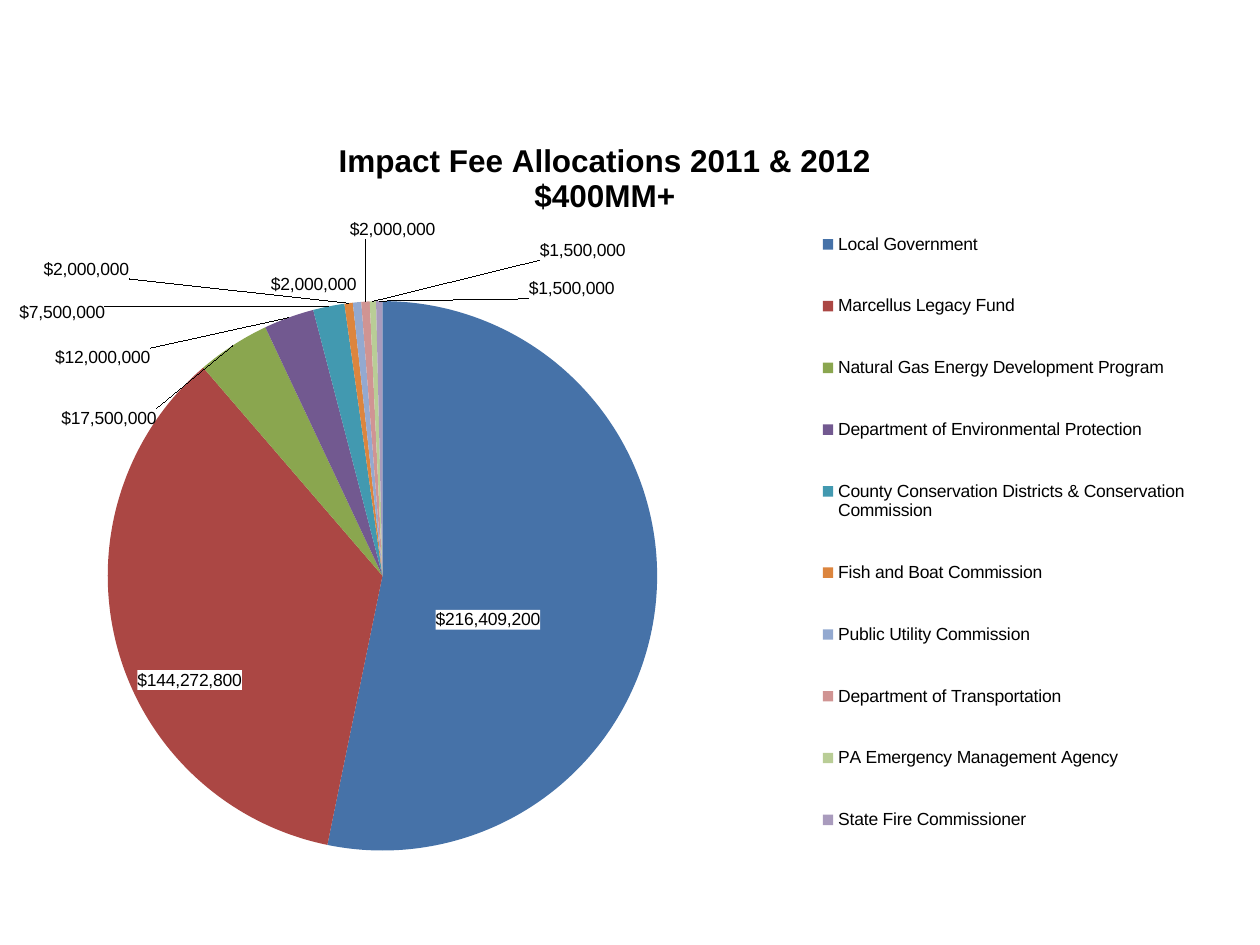
"""Build the impact fee allocation slide with its pie chart."""
from lxml.etree import SubElement
from pptx import Presentation
from pptx.chart.data import CategoryChartData as Data
from pptx.dml.color import RGBColor as RGB
from pptx.enum.chart import XL_CHART_TYPE as Kind
from pptx.enum.chart import XL_LABEL_POSITION as Spot
from pptx.enum.chart import XL_LEGEND_POSITION as Side
from pptx.oxml import parse_xml
from pptx.oxml.ns import nsdecls, qn
from pptx.util import Pt

BLACK = RGB(0, 0, 0)
BLUE = RGB(0x46, 0x72, 0xA8)
RED = RGB(0xAB, 0x47, 0x44)
GREEN = RGB(0x8A, 0xA6, 0x4F)
PURPLE = RGB(0x72, 0x59, 0x90)
TEAL = RGB(0x42, 0x99, 0xB0)
ORANGE = RGB(0xDC, 0x85, 0x3E)
SKY = RGB(0x93, 0xA9, 0xD0)
PINK = RGB(0xD0, 0x94, 0x93)
LIME = RGB(0xB9, 0xCD, 0x96)
LILAC = RGB(0xA9, 0x9B, 0xBD)

MONEY = '"$"#,##0'
TITLE = ["Impact Fee Allocations 2011 & 2012", "$400MM+"]
SHARES = [
    ("Local Government", 216409200, BLUE, (-0.025, 0.041)),
    ("Marcellus Legacy Fund", 144272800, RED, (-0.048, 0.095)),
    ("Natural Gas Energy Development Program", 17500000, GREEN, (-0.058, 0.121)),
    ("Department of Environmental Protection", 12000000, PURPLE, (-0.109, 0.078)),
    ("County Conservation Districts & Conservation Commission", 7500000, TEAL,
     (-0.178, 0.032)),
    ("Fish and Boat Commission", 2000000, ORANGE, (-0.175, -0.023)),
    ("Public Utility Commission", 2000000, SKY, None),
    ("Department of Transportation", 2000000, PINK, (0.022, -0.074)),
    ("PA Emergency Management Agency", 1500000, LIME, (0.168, -0.046)),
    ("State Fire Commissioner", 1500000, LILAC, (0.154, 0.007)),
]
INNER = 2


class Deck:
    """Hold the style and the current slide."""

    def __init__(self, face="Arial", size=10):
        self.face, self.size = face, size
        self.prs = Presentation()
        self.prs.slide_width, self.prs.slide_height = Pt(720), Pt(540)
        self.slide = self.prs.slides.add_slide(self.prs.slide_layouts[6])

    def style(self, font, size, bold=False):
        """Apply the deck's face and ink to a font."""
        font.name, font.size, font.bold = self.face, Pt(size), bold
        font.color.rgb = BLACK

    def place(self, part, index, box, edge=True, inner=False):
        """Give a chart part a manual layout."""
        for old in part.findall(qn("c:layout")):
            part.remove(old)
        frame = parse_xml(f"<c:layout {nsdecls('c')}><c:manualLayout/></c:layout>")
        rules = [("layoutTarget", "inner")] if inner else []
        if edge:
            rules += [("xMode", "edge"), ("yMode", "edge")]
        rules += zip("xywh", box)
        for tag, val in rules:
            SubElement(frame[0], qn(f"c:{tag}"), val=str(val))
        part.insert(index, frame)

    def pie(self, shares, left, top, width, height):
        """Add a pie with one label per share."""
        data = Data(number_format=MONEY)
        data.categories = [name for name, *_ in shares]
        data.add_series("Series 1", [share[1] for share in shares])
        chart = self.slide.shapes.add_chart(
            Kind.PIE, Pt(left), Pt(top), Pt(width), Pt(height), data).chart
        self.style(chart.font, self.size)
        plot = chart.plots[0]
        plot.vary_by_categories = True
        series = plot.series[0]
        tags = series.data_labels
        tags.show_value = True
        tags.number_format, tags.number_format_is_linked = MONEY, False
        tags.position = Spot.OUTSIDE_END
        self.style(tags.font, self.size)
        for i, (_, _, color, shift) in enumerate(shares):
            point = series.points[i]
            point.format.fill.solid()
            point.format.fill.fore_color.rgb = color
            if shift:
                self.tag(series, i, shift)
        self.place(chart._chartSpace.chart.plotArea, 0,
                   (0.074, 0.223, 0.464, 0.748), inner=True)
        return chart

    def tag(self, series, i, shift):
        """Move one value label, backing the inner ones in white."""
        label = series.points[i].data_label
        label.position = Spot.CENTER if i < INNER else Spot.OUTSIDE_END
        self.style(label.font, self.size)
        node = series._element.xpath(f".//c:dLbl[c:idx/@val='{i}']")[0]
        self.place(node, 1, shift, edge=False)
        node.insert(2, parse_xml(
            f'<c:numFmt {nsdecls("c")} formatCode="&quot;$&quot;#,##0" sourceLinked="0"/>'))
        if i < INNER:
            for old in node.findall(qn("c:spPr")):
                node.remove(old)
            node.insert(3, parse_xml(
                f'<c:spPr {nsdecls("c", "a")}><a:solidFill>'
                '<a:srgbClr val="FFFFFF"/></a:solidFill></c:spPr>'))

    def title(self, chart, lines, size, spot):
        """Add a bold chart title, one paragraph per line."""
        chart.has_title = True
        frame = chart.chart_title.text_frame
        frame.text = "\n".join(lines)
        for para in frame.paragraphs:
            self.style(para.font, size, True)
        self.place(chart.chart_title._element, 1, spot)

    def legend(self, chart, box):
        """Add a legend at the right."""
        chart.has_legend = True
        key = chart.legend
        key.position, key.include_in_layout = Side.RIGHT, False
        self.style(key.font, self.size)
        self.place(key._element, 1, box)


def main():
    """Draw the slide and save it."""
    deck = Deck()
    chart = deck.pie(SHARES, 0, 78.5, 714.24, 419.76)
    deck.title(chart, TITLE, 18, (0.268, 0))
    deck.legend(chart, (0.633, 0.075, 0.34, 0.927))
    deck.prs.save("out.pptx")


if __name__ == "__main__":
    main()
